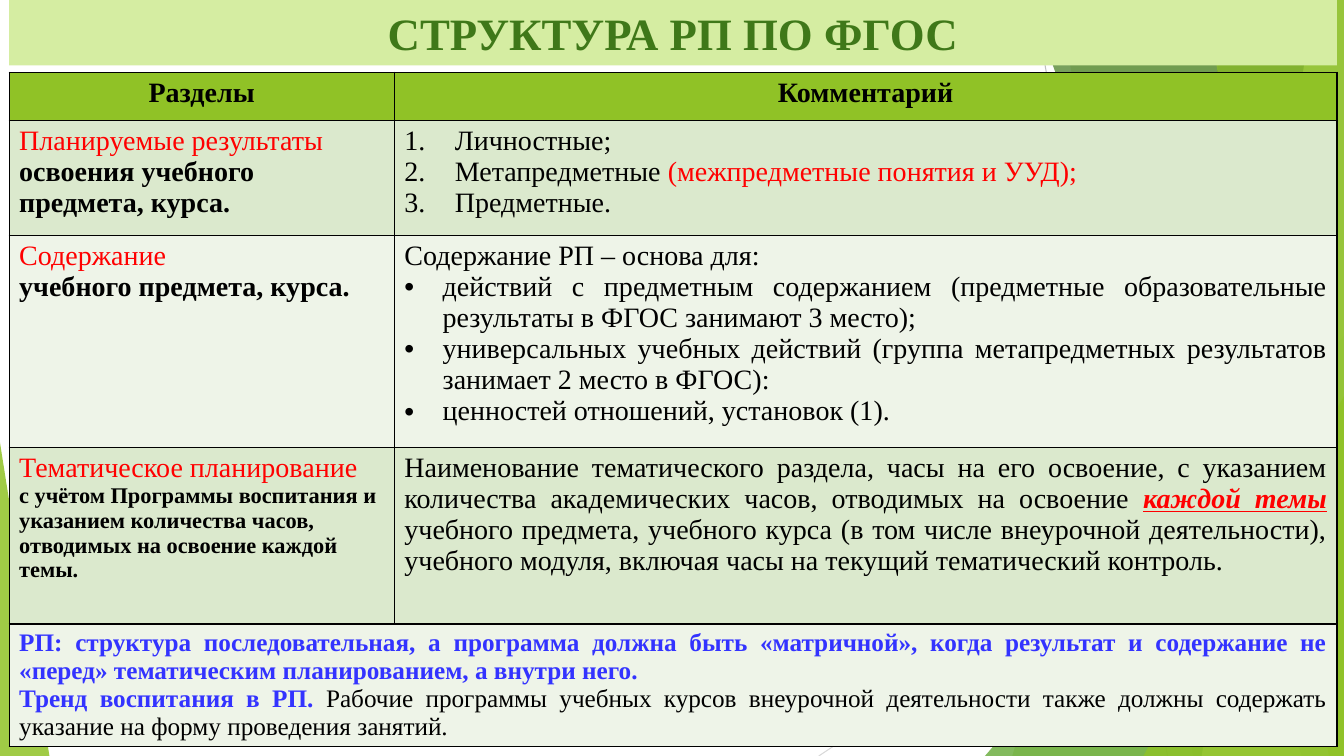
import pptx
import pptx.util
import pptx.dml.color
import pptx.enum.shapes
import pptx.enum.text
import pptx.oxml
import pptx.oxml.ns

WIDE, HIGH = pptx.util.Inches(13.33), pptx.util.Inches(7.5)
FONT = "Times New Roman"
ALIGN = pptx.enum.text.PP_ALIGN
SHAPE = pptx.enum.shapes.MSO_SHAPE

# Text styles: size, colour, bold
STYLES = {
    "title": (32, "3F7819", True),
    "head": (20, "000000", True),
    "red": (20, "FF0000", False),
    "body": (20, "000000", False),
    "small": (16, "000000", True),
    "blue": (18, "3333FF", True),
    "note": (18, "000000", False),
    "stress": (20, "FF0000", True),
}

# List kinds: indent in percent of the width, bullet markup
LISTS = {
    "number": (3.75, ["<a:buFont {} typeface='+mj-lt'/>",
                      "<a:buAutoNum {} type='arabicPeriod'/>"]),
    "dot": (2.85, ["<a:buFont {} typeface='Arial'/>",
                   "<a:buChar {} char='•'/>"]),
}

# Cell paragraphs: alignment, list kind, then (text, style) runs
LEFT, MID, FULL = ALIGN.LEFT, ALIGN.CENTER, ALIGN.JUSTIFY
ROWS = [
    ("90C226",
     [(MID, None, ("Разделы", "head"))],
     [(MID, None, ("Комментарий", "head"))]),
    ("DBE9CD",
     [(LEFT, None, ("Планируемые результаты", "red")),
      (LEFT, None, ("освоения учебного предмета, курса.", "head"))],
     [(FULL, "number", ("Личностные;", "body")),
      (FULL, "number", ("Метапредметные ", "body"),
       ("(межпредметные понятия и УУД);", "red")),
      (FULL, "number", ("Предметные.", "body"))]),
    ("EEF4E8",
     [(LEFT, None, ("Содержание", "red")),
      (LEFT, None, ("учебного предмета, курса.", "head"))],
     [(FULL, None, ("Содержание РП – основа для:", "body")),
      (FULL, "dot", ("действий с предметным содержанием (предметные образовательные "
                     "результаты в ФГОС занимают 3 место);", "body")),
      (FULL, "dot", ("универсальных учебных действий (группа метапредметных "
                     "результатов занимает 2 место в ФГОС):", "body")),
      (FULL, "dot", ("ценностей отношений, установок (1).", "body"))]),
    ("DBE9CD",
     [(LEFT, None, ("Тематическое планирование", "red")),
      (LEFT, None, ("с учётом Программы воспитания и указанием количества часов, "
                    "отводимых на освоение каждой темы.", "small"))],
     [(FULL, None,
       ("Наименование тематического раздела, часы на его освоение, с указанием "
        "количества академических часов, отводимых на освоение ", "body"),
       ("каждой темы", "stress"),
       (" учебного предмета, учебного курса (в том числе внеурочной деятельности), "
        "учебного модуля, включая часы на текущий тематический контроль.", "body"))]),
    ("EEF4E8",
     [(FULL, None,
       ("РП: структура последовательная, а программа должна быть «матричной», когда "
        "результат и содержание не «перед» тематическим планированием, а внутри него.",
        "blue")),
      (FULL, None, ("Тренд воспитания в РП. ", "blue"),
       ("Рабочие программы учебных курсов внеурочной деятельности также должны "
        "содержать указание на форму проведения занятий.", "note"))],
     None),
]
COLS = [28.66, 70.14]
TALLS = [6.4, 15.2, 28, 23.4, 16.2]


def across(share):
    """Percent of the slide's width."""
    return round(WIDE * share / 100)


def down(share):
    """Percent of the slide's height."""
    return round(HIGH * share / 100)


def tint(code):
    return pptx.dml.color.RGBColor.from_string(code)


def node(markup):
    return pptx.oxml.parse_xml(markup.format(pptx.oxml.ns.nsdecls("a")))


def paint(shape, code, alpha=100):
    shape.shadow.inherit = False
    shape.line.fill.background()
    shape.fill.solid()
    shape.fill.fore_color.rgb = tint(code)
    if alpha < 100:
        color = shape.fill._xPr.find(".//" + pptx.oxml.ns.qn("a:srgbClr"))
        color.append(node(f"<a:alpha {{}} val='{alpha * 1000}'/>"))


def ray(slide, start, end, code):
    line = slide.shapes.add_connector(
        pptx.enum.shapes.MSO_CONNECTOR.STRAIGHT,
        across(start[0]), down(start[1]), across(end[0]), down(end[1]))
    line.line.color.rgb = tint(code)
    line.line.width = pptx.util.Pt(0.75)
    line._element.spPr.append(node("<a:effectLst {}/>"))


def band(slide, top, foot, code, alpha):
    """Full-height band from a slanted left side to the right edge."""
    pen = slide.shapes.build_freeform(across(top), 0)
    pen.add_line_segments([(WIDE, 0), (WIDE, HIGH), (across(foot), HIGH)])
    paint(pen.convert_to_shape(), code, alpha)


def wedge(slide, left, top, width, tip, code, alpha):
    """Right triangle on the bottom edge; tip 0 is at left, 1 at right."""
    shape = slide.shapes.add_shape(
        SHAPE.ISOSCELES_TRIANGLE, across(left), down(top), across(width), down(100 - top))
    shape.adjustments[0] = tip
    paint(shape, code, alpha)


def write(frame, paras):
    for i, (align, kind, *runs) in enumerate(paras):
        para = frame.add_paragraph() if i else frame.paragraphs[0]
        para.alignment = align
        if kind:
            indent, marks = LISTS[kind]
            props = para._p.get_or_add_pPr()
            props.set("marL", str(across(indent)))
            props.set("indent", str(-across(indent)))
            props.extend(node(mark) for mark in marks)
        for text, style in runs:
            run = para.add_run()
            run.text = text
            size, code, bold = STYLES[style]
            run.font.name = FONT
            run.font.size = pptx.util.Pt(size)
            run.font.bold = bold
            run.font.color.rgb = tint(code)
            if style == "stress":
                run.font.italic = run.font.underline = True


def frame(cell):
    """Thin black line on all four sides of a cell."""
    props = cell._tc.get_or_add_tcPr()
    for i, side in enumerate("LRTB"):
        props.insert(i, node(
            f"<a:ln{side} {{}} w='12700'><a:solidFill><a:srgbClr val='000000'/>"
            f"</a:solidFill></a:ln{side}>"))


def scene(slide):
    ray(slide, (76.9, 0), (86.87, 100), "BFBFBF")
    ray(slide, (100, 53.73), (60.92, 100), "D9D9D9")
    band(slide, 92.12, 75.32, "90C226", 30)
    band(slide, 78.77, 88.75, "90C226", 20)
    wedge(slide, 73.29, 44.4, 26.71, 1, "54A021", 72)
    band(slide, 76.59, 96.85, "3F7819", 70)
    band(slide, 97.75, 89.42, "C0E474", 70)
    band(slide, 89.72, 98.87, "90C226", 65)
    wedge(slide, 85.07, 52.4, 14.93, 1, "90C226", 80)
    wedge(slide, 0, 58.53, 3.68, 0, "90C226", 85)


def title(slide):
    bar = slide.shapes.add_shape(
        SHAPE.RECTANGLE, across(0.68), 0, across(sum(COLS)), down(8.67))
    paint(bar, "D5EDA2")
    bar.text_frame.vertical_anchor = pptx.enum.text.MSO_ANCHOR.MIDDLE
    write(bar.text_frame, [(MID, None, ("СТРУКТУРА РП ПО ФГОС", "title"))])


def grid(slide):
    table = slide.shapes.add_table(
        len(ROWS), len(COLS), across(0.68), down(9.55),
        across(sum(COLS)), down(sum(TALLS))).table
    for col, share in zip(table.columns, COLS):
        col.width = across(share)
    for r, (code, *texts) in enumerate(ROWS):
        table.rows[r].height = down(TALLS[r])
        for c, paras in enumerate(texts):
            cell = table.cell(r, c)
            cell.fill.solid()
            cell.fill.fore_color.rgb = tint(code)
            frame(cell)
            if paras:
                write(cell.text_frame, paras)
    last = len(ROWS) - 1
    table.cell(last, 0).merge(table.cell(last, 1))


def main():
    deck = pptx.Presentation()
    deck.slide_width, deck.slide_height = WIDE, HIGH
    slide = deck.slides.add_slide(deck.slide_layouts[6])
    scene(slide)
    title(slide)
    grid(slide)
    deck.save("out.pptx")


if __name__ == "__main__":
    main()
